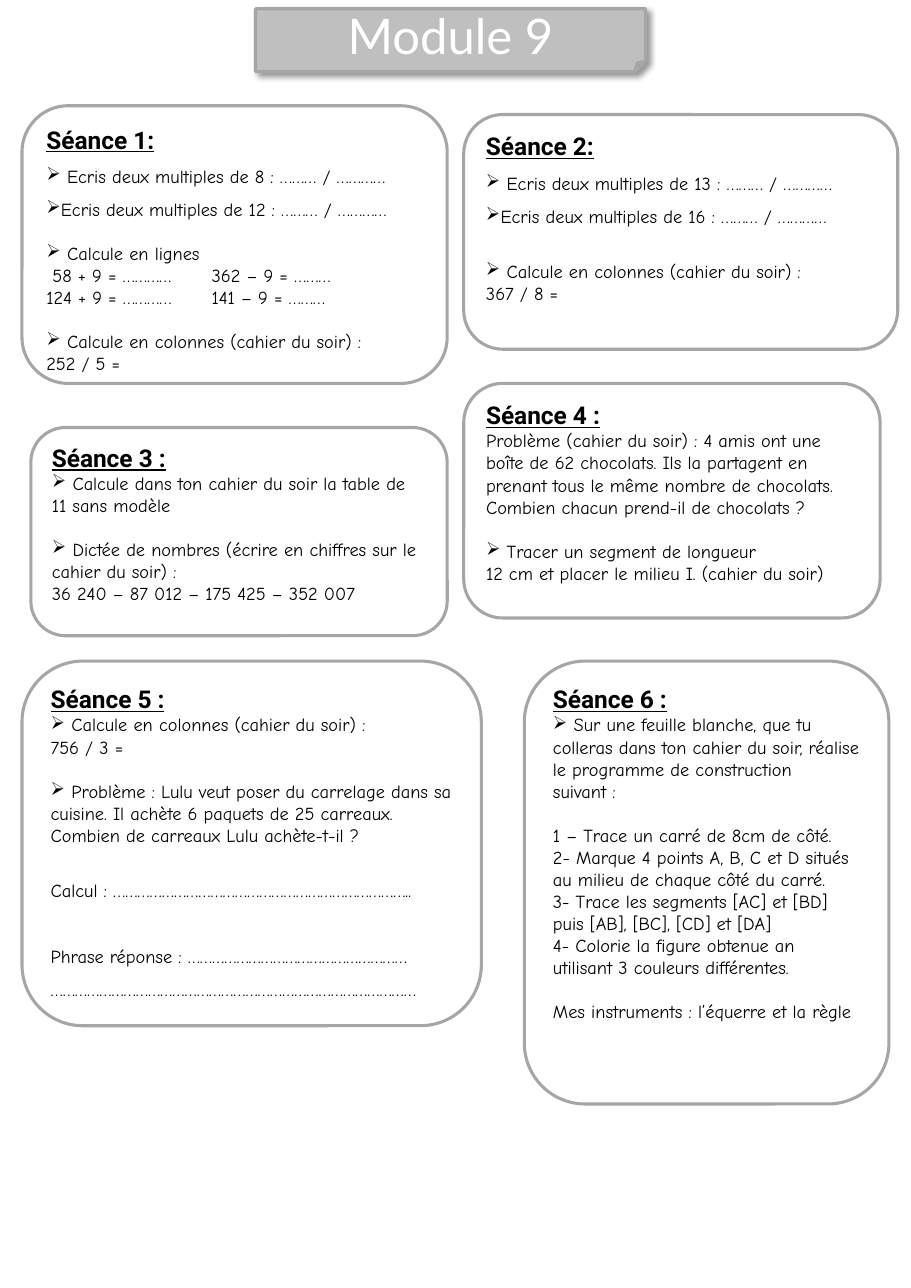
from lxml import etree
from pptx import Presentation
from pptx.dml.color import RGBColor
from pptx.enum.shapes import MSO_SHAPE
from pptx.enum.text import MSO_ANCHOR, MSO_AUTO_SIZE, PP_ALIGN
from pptx.oxml.ns import qn
from pptx.util import Pt

PX = 9144  # 100 px to the inch
FOLD, ROUND = MSO_SHAPE.FOLDED_CORNER, MSO_SHAPE.ROUNDED_RECTANGLE
TOP, MID = MSO_ANCHOR.TOP, MSO_ANCHOR.MIDDLE
LEFT, MIDDLE = PP_ALIGN.LEFT, PP_ALIGN.CENTER
FIXED = MSO_AUTO_SIZE.NONE
BULLET = "➢"
WIDE = 1.5
GAP, BIG = 14.4, 21.6  # points of space above a paragraph

# box, heading, then rows of (text, line spacing, space before)
PANELS = [
    ((20, 96, 386, 252), "Séance 1:", [
        ("➢ Ecris deux multiples de 8 : ……… / …………", WIDE),
        ("➢Ecris deux multiples de 12 : ……… / …………", WIDE),
        ("➢ Calcule en lignes", 1, GAP),
        (" 58 + 9 = …………\t362 – 9 = ………",),
        ("124 + 9 = …………\t141 – 9 = ………",),
        ("➢ Calcule en colonnes (cahier du soir) :", 1, GAP),
        ("252 / 5 =",),
    ]),
    ((421, 104, 394, 213), "Séance 2:", [
        ("➢ Ecris deux multiples de 13 : ……… / …………", WIDE),
        ("➢Ecris deux multiples de 16 : ……… / …………", WIDE),
        ("➢ Calcule en colonnes (cahier du soir) :", 1, BIG),
        ("367 / 8 =",),
    ]),
    ((28, 388, 378, 189), "Séance 3 :", [
        ("➢ Calcule dans ton cahier du soir la table de 11 sans modèle",),
        ("➢ Dictée de nombres (écrire en chiffres sur le cahier du soir) :",
         1, GAP),
        ("36 240 – 87 012 – 175 425 – 352 007",),
    ]),
    ((421, 348, 378, 213), "Séance 4 :", [
        ("Problème (cahier du soir) : 4 amis ont une boîte de 62 chocolats. "
         "Ils la partagent en prenant tous le même nombre de chocolats.",),
        ("Combien chacun prend-il de chocolats ?",),
        ("➢ Tracer un segment de longueur", 1, GAP),
        ("12 cm et placer le milieu I. (cahier du soir)",),
    ]),
    ((20, 600, 417, 331), "Séance 5 :", [
        ("➢ Calcule en colonnes (cahier du soir) :",),
        ("756 / 3 =",),
        ("➢ Problème : Lulu veut poser du carrelage dans sa cuisine. "
         "Il achète 6 paquets de 25 carreaux.", 1, GAP),
        ("Combien de carreaux Lulu achète-t-il ?",),
        ("Calcul : ………………………………………………………………..", WIDE, GAP),
        ("Phrase réponse : ………………………………………………", WIDE, BIG),
        ("………………………………………………………………………………", WIDE),
    ]),
    ((476, 600, 331, 402), "Séance 6 :", [
        ("➢ Sur une feuille blanche, que tu colleras dans ton cahier du soir, "
         "réalise le programme de construction suivant :",),
        ("1 – Trace un carré de 8cm de côté.", 1, GAP),
        ("2- Marque 4 points A, B, C et D situés au milieu de chaque côté "
         "du carré.",),
        ("3- Trace les segments [AC] et [BD] puis [AB], [BC], [CD] et [DA]",),
        ("4- Colorie la figure obtenue an utilisant 3 couleurs différentes.",),
        ("Mes instruments : l’équerre et la règle", 1, GAP),
    ]),
]


def tint(code):
    return RGBColor.from_string(code)


def style(para, name, size, color="000000", strong=False):
    for run in para.runs:
        font = run.font
        font.name, font.size = name, Pt(size)
        font.color.rgb = tint(color)
        font.bold = font.underline = strong


def frame(slide, kind, box):
    """Add a grey-edged shape without fill or shadow."""
    shape = slide.shapes.add_shape(kind, *(n * PX for n in box))
    shape.shadow.inherit = False
    shape.fill.background()
    shape.line.color.rgb = tint("A6A6A6")
    shape.line.width = Pt(2)
    return shape


def shade(shape):
    """Give the shape a soft shadow to the lower right."""
    list_ = shape.element.spPr.find(qn("a:effectLst"))
    outer = etree.SubElement(list_, qn("a:outerShdw"), blurRad=str(Pt(4)),
                             dist=str(Pt(3)), dir="2700000", algn="tl",
                             rotWithShape="0")
    color = etree.SubElement(outer, qn("a:srgbClr"), val="000000")
    etree.SubElement(color, qn("a:alpha"), val="40000")


def banner(slide, box, text):
    x, y, w, h = box
    plate = frame(slide, FOLD, box)
    plate.fill.solid()
    plate.fill.fore_color.rgb = tint("BFBFBF")
    shade(plate)

    title = slide.shapes.title
    slide.shapes.element.append(title.element)  # in front of the plate
    title.left, title.top = x * PX, (y - 3) * PX
    title.width, title.height = w * PX, (h - 3) * PX
    body = title.text_frame
    body.text = text
    body.auto_size, body.vertical_anchor = FIXED, MID
    body.margin_top = body.margin_bottom = 0
    para = body.paragraphs[0]
    para.alignment = MIDDLE
    style(para, "Lato", 32, "FFFFFF")


def write(para, text, line=1, gap=0):
    para.text = text.removeprefix(BULLET)
    para.alignment = LEFT
    para.line_spacing = float(line)
    para.space_before = Pt(gap)
    style(para, "Comic Neue", 12)
    if text.startswith(BULLET):
        props = para._p.get_or_add_pPr()
        etree.SubElement(props, qn("a:buChar"), char=BULLET)


def panel(slide, box, head, rows):
    body = frame(slide, ROUND, box).text_frame
    body.word_wrap, body.vertical_anchor = True, TOP
    body.text = head
    first = body.paragraphs[0]
    first.alignment = LEFT
    style(first, "Roboto", 16, strong=True)
    for row in rows:
        write(body.add_paragraph(), *row)


def main():
    deck = Presentation()
    deck.slide_width, deck.slide_height = 827 * PX, 1169 * PX
    slide = deck.slides.add_slide(deck.slide_layouts[5])
    banner(slide, (232, 8, 354, 57), "Module 9")
    for box, head, rows in PANELS:
        panel(slide, box, head, rows)
    deck.save("out.pptx")


if __name__ == "__main__":
    main()
